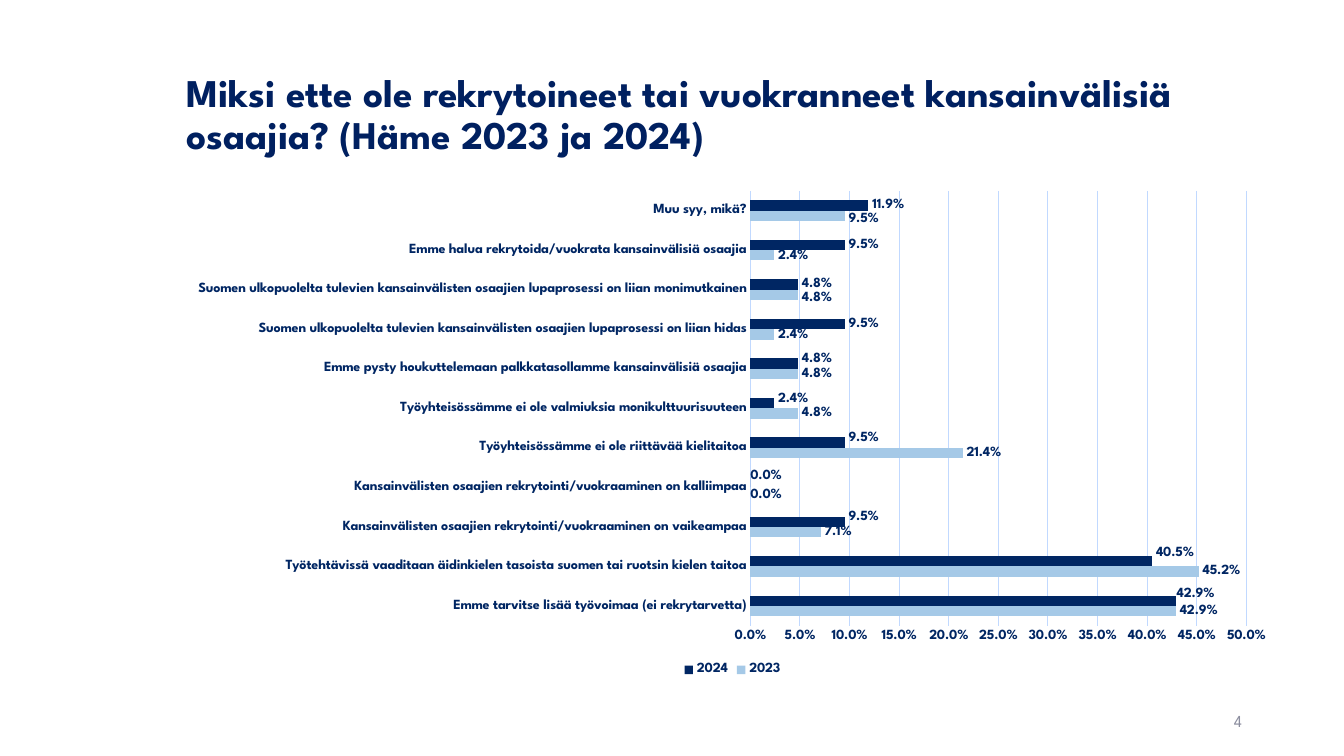
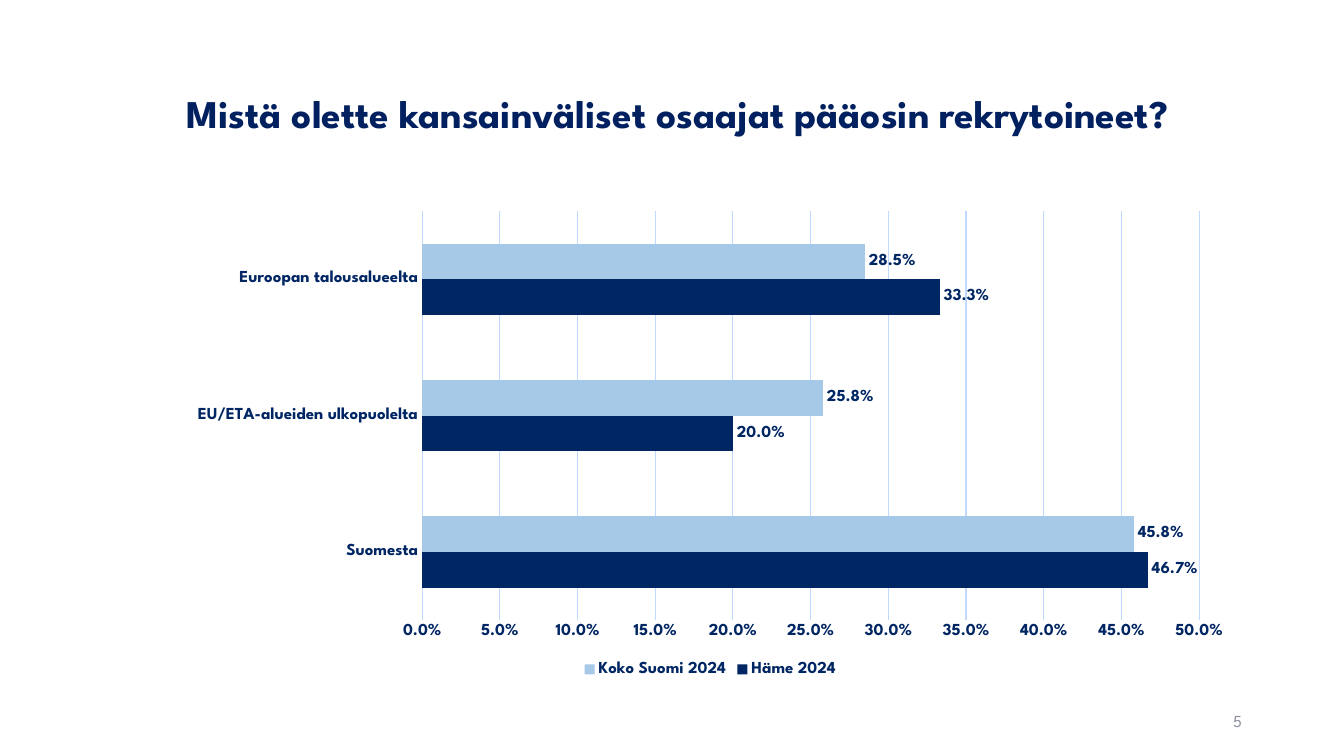
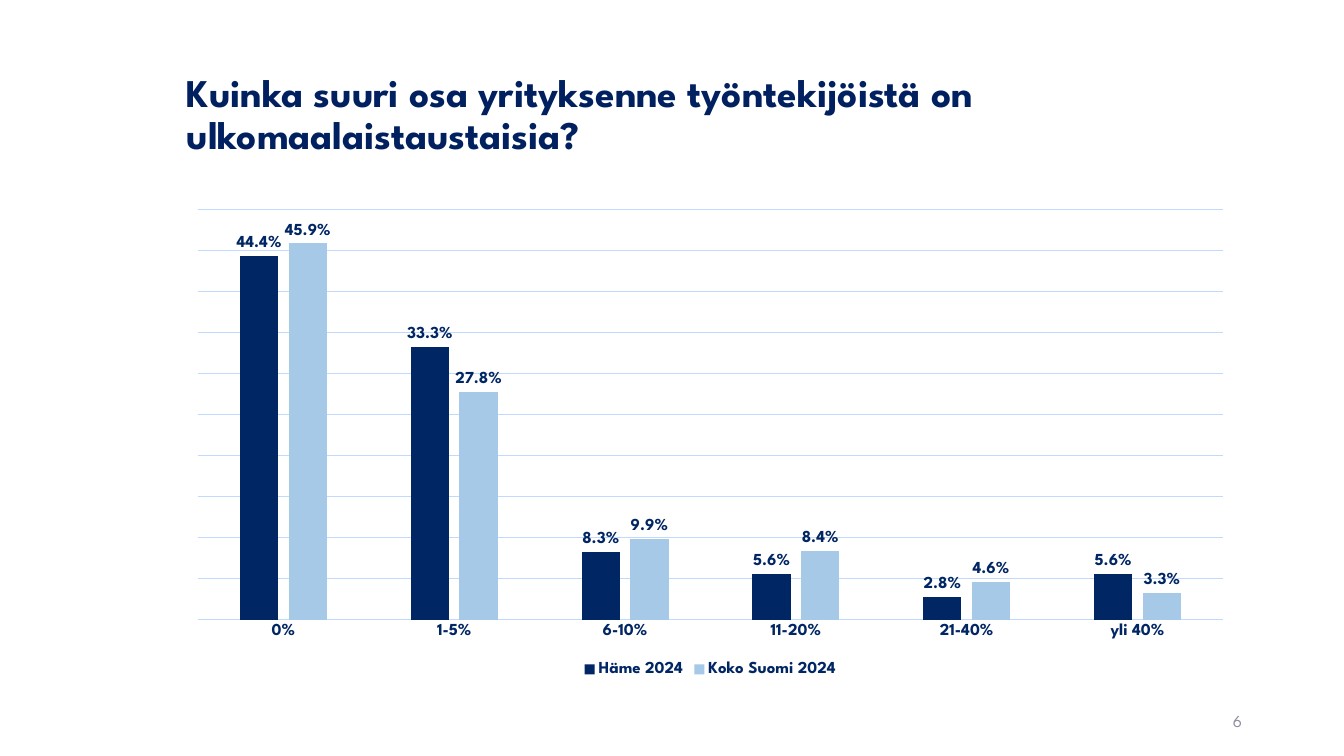
from lxml import etree
from pptx import Presentation
from pptx.chart.data import CategoryChartData
from pptx.dml.color import RGBColor
from pptx.enum import chart as ch, text
from pptx.oxml import ns
from pptx.util import Cm, Pt

TITLE_NAVY = RGBColor(0x00, 0x20, 0x60)
NAVY = RGBColor(0x00, 0x26, 0x63)
SKY = RGBColor(0xA5, 0xC9, 0xE7)
GRID = RGBColor(0xC1, 0xD9, 0xFF)
GREY = RGBColor(0x8C, 0x8E, 0x9F)
FONT = "League Spartan"
PERCENT = "0.0%"

TITLE_BOX = (Cm(4.45), Cm(1.27), Cm(26.9), Cm(3.3))
NUMBER_BOX = (Cm(23.93), Cm(17.65), Cm(7.62), Cm(1.02))
CHART_BOX = (Cm(4.45), Cm(5.08), Cm(26.9), Cm(12.09))
REASONS_BOX = (Cm(4.45), Cm(4.57), Cm(28.02), Cm(12.57))

REASONS = {
    "Emme tarvitse lisää työvoimaa (ei rekrytarvetta)": (0.429, 0.429),
    "Työtehtävissä vaaditaan äidinkielen tasoista suomen tai ruotsin kielen taitoa": (0.452, 0.405),
    "Kansainvälisten osaajien rekrytointi/vuokraaminen on vaikeampaa": (0.071, 0.095),
    "Kansainvälisten osaajien rekrytointi/vuokraaminen on kalliimpaa": (0, 0),
    "Työyhteisössämme ei ole riittävää kielitaitoa": (0.214, 0.095),
    "Työyhteisössämme ei ole valmiuksia monikulttuurisuuteen": (0.048, 0.024),
    "Emme pysty houkuttelemaan palkkatasollamme kansainvälisiä osaajia": (0.048, 0.048),
    "Suomen ulkopuolelta tulevien kansainvälisten osaajien lupaprosessi on liian hidas": (0.024, 0.095),
    "Suomen ulkopuolelta tulevien kansainvälisten osaajien lupaprosessi on liian monimutkainen": (0.048, 0.048),
    "Emme halua rekrytoida/vuokrata kansainvälisiä osaajia": (0.024, 0.095),
    "Muu syy, mikä?": (0.095, 0.119),
}
REASON_LABEL_SHIFTS = {
    "2023": {3: (-0.1, 0.08), 7: (0, 0.03), 8: (0, 0.1), 9: (0, 0.03), 10: (0, 0.08)},
    "2024": {0: (-0.08, -0.15), 1: (0, -0.2), 2: (0, -0.1), 3: (-0.1, -0.15),
             4: (0, -0.1), 5: (0, -0.1), 6: (0, -0.1)},
}
ORIGINS = {
    "Suomesta": (0.467, 0.458),
    "EU/ETA-alueiden ulkopuolelta": (0.2, 0.258),
    "Euroopan talousalueelta": (0.333, 0.285),
}
SHARES = {
    "0%": (0.444, 0.459),
    "1-5%": (0.333, 0.278),
    "6-10%": (0.083, 0.099),
    "11-20%": (0.056, 0.084),
    "21-40%": (0.028, 0.046),
    "yli 40%": (0.056, 0.033),
}


def style_font(font, size, color=NAVY, bold=True):
    """Apply the deck's typeface to a font."""
    font.name = FONT
    font.size = Pt(size)
    font.bold = bold
    font.color.rgb = color


def place(part, box):
    """Move a placeholder to a box."""
    part.left, part.top, part.width, part.height = box


def add_titled_slide(prs, title, number):
    """Add a slide with its title and page number."""
    slide = prs.slides.add_slide(prs.slide_layouts[5])
    heading = slide.shapes.title
    place(heading, TITLE_BOX)
    page = slide.shapes.add_textbox(*NUMBER_BOX)
    parts = (
        (heading, title, 28, TITLE_NAVY, True, text.PP_ALIGN.LEFT),
        (page, str(number), 12, GREY, False, text.PP_ALIGN.RIGHT),
    )
    for part, wording, size, color, bold, align in parts:
        frame = part.text_frame
        frame.text = wording
        frame.word_wrap = True
        frame.auto_size = text.MSO_AUTO_SIZE.NONE
        frame.vertical_anchor = text.MSO_ANCHOR.MIDDLE
        paragraph = frame.paragraphs[0]
        paragraph.alignment = align
        style_font(paragraph.font, size, color, bold)
    heading.text_frame.paragraphs[0].line_spacing = 0.9
    return slide


def manual_layout(**values):
    """Return a layout element with the given settings."""
    layout = etree.Element(ns.qn("c:layout"))
    manual = etree.SubElement(layout, ns.qn("c:manualLayout"))
    for tag, value in values.items():
        etree.SubElement(manual, ns.qn(f"c:{tag}")).set("val", str(value))
    return layout


def fix_plot_area(chart, box, plot_box):
    """Set the inner plot area, given in centimetres inside the chart box."""
    x, y, w, h = (Cm(length) / box[2 + i % 2] for i, length in enumerate(plot_box))
    plot_area = chart.plots[0]._element.getparent()
    for layout in plot_area.findall(ns.qn("c:layout")):
        plot_area.remove(layout)
    plot_area.insert(0, manual_layout(layoutTarget="inner", xMode="edge", yMode="edge",
                                      x=x, y=y, w=w, h=h))


def shift_labels(series, shifts, box, size):
    """Shift single value labels by centimetres."""
    for index in shifts:
        label = series.points[index].data_label
        style_font(label.font, size)
        label.position = ch.XL_LABEL_POSITION.OUTSIDE_END
    for label in series.data_labels._element.findall(ns.qn("c:dLbl")):
        idx = label.find(ns.qn("c:idx"))
        dx, dy = shifts[int(idx.get("val"))]
        number_format = etree.Element(ns.qn("c:numFmt"), formatCode=PERCENT, sourceLinked="0")
        idx.addnext(number_format)
        idx.addnext(manual_layout(x=Cm(dx) / box[2], y=Cm(dy) / box[3]))


def add_share_chart(slide, box, plot_box, kind, colors, shares, size=12, gap=182,
                    overlap=0, show_values=True, label_shifts=None):
    """Add a clustered chart of percentages in the given box."""
    data = CategoryChartData(number_format=PERCENT)
    data.categories = list(shares)
    for name, values in zip(colors, zip(*shares.values())):
        data.add_series(name, values)
    chart = slide.shapes.add_chart(kind, *box, data).chart
    style_font(chart.font, size)
    chart.has_title = False
    chart.has_legend = True
    chart.legend.position = ch.XL_LEGEND_POSITION.BOTTOM
    chart.legend.include_in_layout = False
    style_font(chart.legend.font, size)

    categories, values = chart.category_axis, chart.value_axis
    for axis in (categories, values):
        axis.major_tick_mark = axis.minor_tick_mark = ch.XL_TICK_MARK.NONE
        style_font(axis.tick_labels.font, size)
    values.minimum_scale, values.maximum_scale, values.major_unit = 0, 0.5, 0.05
    values.tick_labels.number_format = PERCENT
    values.tick_labels.number_format_is_linked = False
    values.visible = show_values
    values.has_major_gridlines = True
    values.format.line.fill.background()
    for line in (categories.format.line, values.major_gridlines.format.line):
        line.color.rgb = GRID
        line.width = Pt(0.75)

    plot = chart.plots[0]
    plot.gap_width, plot.overlap, plot.vary_by_categories = gap, overlap, False
    for series in plot.series:
        series.format.fill.solid()
        series.format.fill.fore_color.rgb = colors[series.name]
        labels = series.data_labels
        labels.show_value = True
        labels.position = ch.XL_LABEL_POSITION.OUTSIDE_END
        labels.number_format = PERCENT
        labels.number_format_is_linked = False
        style_font(labels.font, size)
        if label_shifts:
            shift_labels(series, label_shifts[series.name], box, size)
    fix_plot_area(chart, box, plot_box)


def main():
    """Build the deck."""
    prs = Presentation()
    prs.slide_width, prs.slide_height = Cm(33.87), Cm(19.05)
    bars, columns = ch.XL_CHART_TYPE.BAR_CLUSTERED, ch.XL_CHART_TYPE.COLUMN_CLUSTERED
    regions = {"Häme 2024": NAVY, "Koko Suomi 2024": SKY}

    reasons = add_titled_slide(
        prs, "Miksi ette ole rekrytoineet tai vuokranneet kansainvälisiä osaajia? (Häme 2023 ja 2024)", 4)
    add_share_chart(reasons, REASONS_BOX, (14.46, 0.24, 12.5, 10.96), bars,
                    {"2023": SKY, "2024": NAVY}, REASONS, size=10,
                    label_shifts=REASON_LABEL_SHIFTS)

    origins = add_titled_slide(prs, "Mistä olette kansainväliset osaajat pääosin rekrytoineet?", 5)
    add_share_chart(origins, CHART_BOX, (6.19, 0.24, 19.58, 10.31), bars, regions, ORIGINS)

    shares = add_titled_slide(
        prs, "Kuinka suuri osa yrityksenne työntekijöistä on ulkomaalaistaustaisia?", 6)
    add_share_chart(shares, CHART_BOX, (0.54, 0.21, 25.83, 10.33), columns, regions, SHARES,
                    gap=219, overlap=-27, show_values=False)
    prs.save("out.pptx")


if __name__ == "__main__":
    main()
